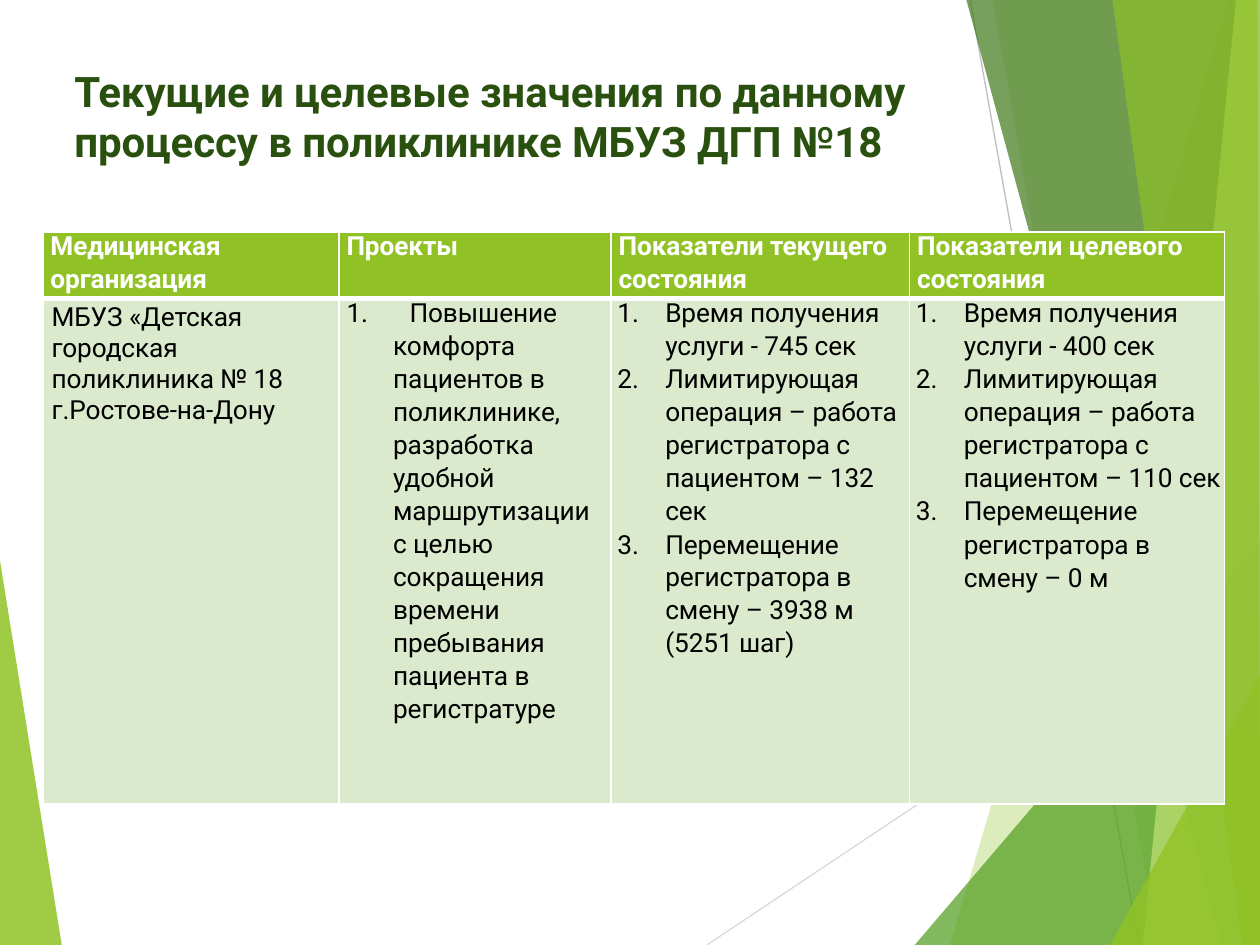
"""Build the slide with current and target values of the clinic process."""
from copy import deepcopy
from dataclasses import dataclass
from typing import Any, Optional, Sequence

from lxml import etree
from pptx import Presentation
from pptx import util as u
from pptx.dml.color import RGBColor
from pptx.enum import shapes, text
from pptx.oxml import ns

FONT = "Roboto"
LIME = RGBColor(0x90, 0xC2, 0x25)
LEAF = RGBColor(0x53, 0x9F, 0x20)
FOREST = RGBColor(0x3E, 0x78, 0x18)
PALE_LIME = RGBColor(0xC0, 0xE3, 0x74)
TITLE_GREEN = RGBColor(0x2A, 0x50, 0x0F)
CELL_GREEN = RGBColor(0xDB, 0xE9, 0xCD)
LIGHT_GRAY = RGBColor(0xD9, 0xD9, 0xD9)
GRAY = RGBColor(0xBE, 0xBE, 0xBE)
WHITE = RGBColor(0xFF, 0xFF, 0xFF)
BLACK = RGBColor(0, 0, 0)
FIRST_LINE = u.Pt(17.4)
LOOSE = 1.07


@dataclass(frozen=True)
class Facet:
    points: Sequence[tuple[float, float]]
    color: RGBColor
    opacity: int


@dataclass(frozen=True)
class Ray:
    start: tuple[float, float]
    end: tuple[float, float]
    color: RGBColor


@dataclass(frozen=True)
class Line:
    words: str
    indent: float = 0.43
    before: float = 1.2
    spacing: Any = None
    number: Optional[int] = None
    tab: Optional[float] = None


RAYS = [
    Ray((5.61, 7.5), (10, 4.57), LIGHT_GRAY),
    Ray((7.7, 0), (9.04, 7.5), GRAY),
]
LEFT_FACET = Facet([(0, 4.45), (0, 7.5), (0.49, 7.5)], LIME, 85)
RIGHT_FACETS = [
    Facet([(9.75, 0), (7.54, 7.5), (10, 7.5), (10, 0)], LIME, 30),
    Facet([(10, 0), (7.88, 0), (9.19, 7.5), (10, 7.5)], LIME, 20),
    Facet([(10, 4.29), (7.26, 7.5), (10, 7.5)], LEAF, 72),
    Facet([(10, 0), (7.67, 0), (9.7, 7.5), (10, 7.5)], FOREST, 70),
    Facet([(10, 0), (9.81, 0), (9.07, 7.5), (10, 7.5)], PALE_LIME, 70),
    Facet([(9.98, 0), (8.83, 0), (9.86, 7.5), (10, 7.5), (9.99, 2.72)], LIME, 65),
    Facet([(10, 5.36), (8.81, 7.5), (10, 7.5)], LIME, 80),
]
TITLE = [
    Line("Текущие и целевые значения по данному", 0.01, 1),
    Line("процессу в поликлинике МБУЗ ДГП №18", 0.01, 0),
]
HEADERS = [
    ["Медицинская", "организация"],
    ["Проекты"],
    ["Показатели текущего", "состояния"],
    ["Показатели целевого", "состояния"],
]
CLINIC = [Line("МБУЗ «Детская  городская поликлиника № 18\vг.Ростове-на-Дону", 0.07, 2.2)]
PROJECT = [
    Line("1.\tПовышение", 0.06, 0, FIRST_LINE, tab=0.49),
    Line("комфорта"),
    Line("пациентов в"),
    Line("поликлинике,  разработка  удобной  маршрутизации  с целью  сокращения  времени",
         before=0.1, spacing=LOOSE),
    Line("пребывания"),
    Line("пациента в  регистратуре", before=0.1, spacing=LOOSE),
]
CURRENT_END = [
    Line("пациентом – 132  сек", before=0.1, spacing=LOOSE),
    Line("Перемещение  регистратора в  смену – 3938 м  (5251 шаг)",
         before=0.1, spacing=LOOSE, number=3),
]
TARGET_END = [
    Line("пациентом – 110 сек", before=1.4),
    Line("Перемещение", number=3),
    Line("регистратора в  смену – 0 м", before=0.1, spacing=LOOSE),
]
COLUMN_WIDTHS = [2.35, 2.16, 2.37, 2.5]
ROW_HEIGHTS = [0.53, 4.01]


def set_values(target: Any, values: dict[str, Any]) -> None:
    """Set each named attribute of the target."""
    for name, value in values.items():
        setattr(target, name, value)


def indicators(seconds: int, ending: list[Line]) -> list[Line]:
    """Return the numbered indicators that both state columns share."""
    return [
        Line("Время получения", before=0, spacing=FIRST_LINE, number=1),
        Line(f"услуги - {seconds} сек"),
        Line("Лимитирующая", number=2),
        Line("операция – работа", before=1.4),
        Line("регистратора с"),
        *ending,
    ]


def header_lines(words: list[str]) -> list[Line]:
    """Return the heading lines, the first with an exact height."""
    first, *others = words
    return [Line(first, 0.06, 0, FIRST_LINE), *(Line(other, 0.06, 1.3) for other in others)]


def draw_facet(page: Any, facet: Facet) -> None:
    """Draw a translucent polygon without an outline."""
    points = [(u.Inches(x), u.Inches(y)) for x, y in facet.points]
    builder = page.shapes.build_freeform(*points[0], scale=1.0)
    builder.add_line_segments(points[1:], close=True)
    shape = builder.convert_to_shape()
    shape.shadow.inherit = False
    shape.line.fill.background()
    shape.fill.solid()
    shape.fill.fore_color.rgb = facet.color
    color = shape._element.spPr.find(".//" + ns.qn("a:srgbClr"))
    etree.SubElement(color, ns.qn("a:alpha"), val=str(facet.opacity * 1000))


def draw_ray(page: Any, ray: Ray) -> None:
    """Draw a thin straight line."""
    ends = [u.Inches(value) for value in (*ray.start, *ray.end)]
    connector = page.shapes.add_connector(shapes.MSO_CONNECTOR.STRAIGHT, *ends)
    connector.line.color.rgb = ray.color
    connector.line.width = u.Pt(0.75)
    etree.SubElement(connector._element.spPr, ns.qn("a:effectLst"))


def write_lines(frame: Any, lines: list[Line], size: float, color: RGBColor, bold: bool) -> None:
    """Fill a text frame with formatted paragraphs."""
    for index, line in enumerate(lines):
        para = frame.add_paragraph() if index else frame.paragraphs[0]
        para.text = line.words
        set_values(para, {"alignment": text.PP_ALIGN.LEFT, "line_spacing": line.spacing,
                          "space_before": u.Pt(line.before)})
        props = para._p.get_or_add_pPr()
        props.set("marL", str(u.Inches(line.indent)))
        props.set("indent", str(u.Inches(-0.38 if line.number else 0)))
        if line.number:
            etree.SubElement(props, ns.qn("a:buAutoNum"), type="arabicPeriod",
                             startAt=str(line.number))
        else:
            etree.SubElement(props, ns.qn("a:buNone"))
        if line.tab:
            tabs = etree.SubElement(props, ns.qn("a:tabLst"))
            etree.SubElement(tabs, ns.qn("a:tab"), pos=str(u.Inches(line.tab)), algn="l")
        for span in para.runs:
            set_values(span.font, {"name": FONT, "size": u.Pt(size), "bold": bold})
            span.font.color.rgb = color
            span._r.get_or_add_rPr().set("spc", "-5")
        for line_break in para._p.findall(ns.qn("a:br")):
            line_break.append(deepcopy(para.runs[0]._r.rPr))


def draw_borders(cell: Any, top: float, bottom: float) -> None:
    """Give a cell white borders with the given top and bottom widths."""
    props = cell._tc.get_or_add_tcPr()
    for index, (side, width) in enumerate({"L": 1, "R": 1, "T": top, "B": bottom}.items()):
        border = etree.Element(ns.qn(f"a:ln{side}"), w=str(u.Pt(width)))
        fill = etree.SubElement(border, ns.qn("a:solidFill"))
        etree.SubElement(fill, ns.qn("a:srgbClr"), val=str(WHITE))
        props.insert(index, border)


def draw_title(page: Any) -> None:
    """Draw the two-line slide title."""
    box = page.shapes.add_textbox(u.Inches(0.58), u.Inches(0.51), u.Inches(6.86), u.Inches(0.83))
    set_values(box.text_frame, {"word_wrap": True, "margin_left": 0, "margin_right": 0,
                                "margin_top": u.Inches(0.01), "margin_bottom": 0})
    write_lines(box.text_frame, TITLE, 24, TITLE_GREEN, True)


def draw_table(page: Any) -> None:
    """Draw the table of current and target values."""
    body = [CLINIC, PROJECT, indicators(745, CURRENT_END), indicators(400, TARGET_END)]
    rows = [[header_lines(words) for words in HEADERS], body]
    table = page.shapes.add_table(2, 4, u.Inches(0.34), u.Inches(1.84), u.Inches(9.38),
                                  u.Inches(4.54)).table
    table.horz_banding = False
    for column, width in zip(table.columns, COLUMN_WIDTHS):
        column.width = u.Inches(width)
    for row, height in zip(table.rows, ROW_HEIGHTS):
        row.height = u.Inches(height)
    for r, row_lines in enumerate(rows):
        for c, lines in enumerate(row_lines):
            cell = table.cell(r, c)
            top = u.Inches(0.03) if lines is CLINIC else 0
            set_values(cell, {"margin_left": 0, "margin_right": 0, "margin_top": top,
                              "margin_bottom": 0})
            cell.fill.solid()
            cell.fill.fore_color.rgb = CELL_GREEN if r else LIME
            draw_borders(cell, *((3, 1) if r else (1, 3)))
            write_lines(cell.text_frame, lines, 15, BLACK if r else WHITE, not r)


def main() -> None:
    """Build and save the deck."""
    deck = Presentation()
    set_values(deck, {"slide_width": u.Inches(10), "slide_height": u.Inches(7.5)})
    page = deck.slides.add_slide(deck.slide_layouts[6])
    draw_facet(page, LEFT_FACET)
    for ray in RAYS:
        draw_ray(page, ray)
    for facet in RIGHT_FACETS:
        draw_facet(page, facet)
    draw_title(page)
    draw_table(page)
    deck.save("out.pptx")


if __name__ == "__main__":
    main()
